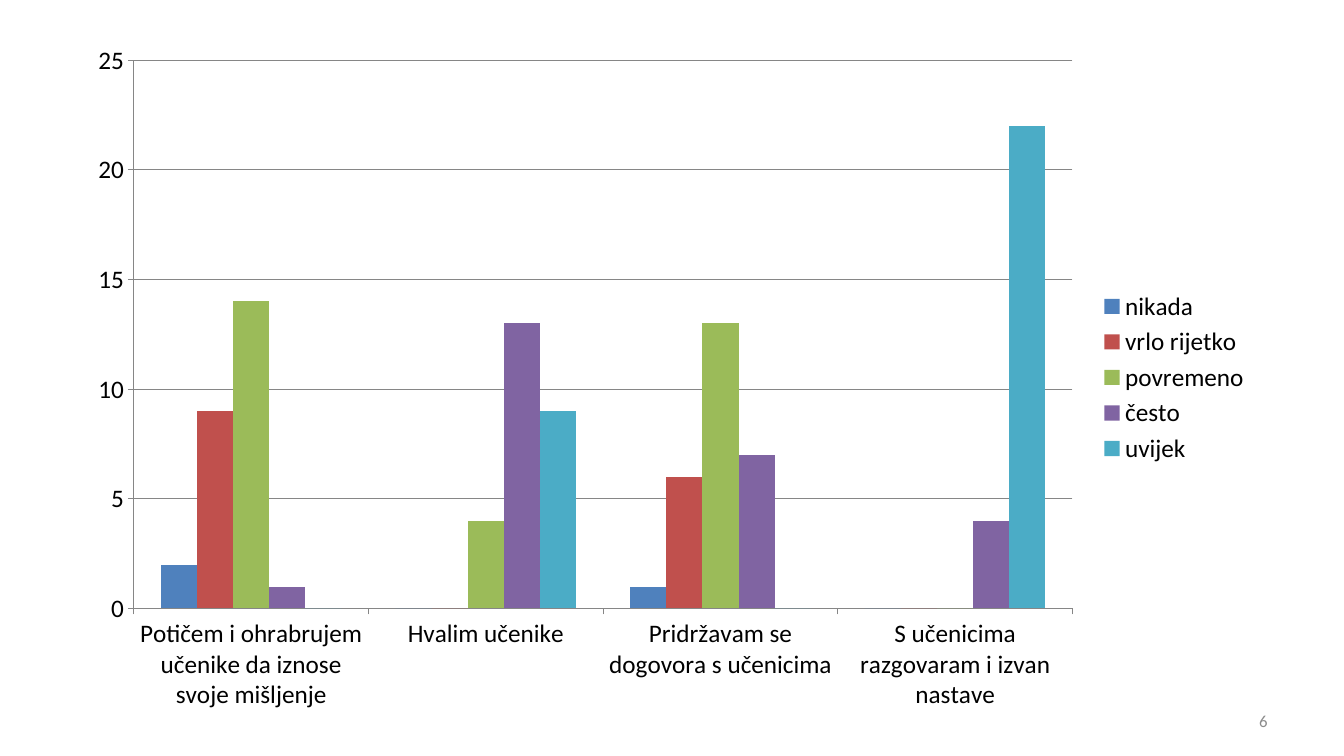
from pptx import Presentation
from pptx import util as u
from pptx.chart.data import CategoryChartData
from pptx.dml.color import RGBColor
from pptx.enum import chart as charts, text

CATEGORIES = [
    "Potičem i ohrabrujem učenike da iznose svoje mišljenje",
    "Hvalim učenike",
    "Pridržavam se dogovora s učenicima",
    "S učenicima razgovaram i izvan nastave",
]
ANSWERS = [
    ("nikada", (2, 0, 1, 0), "4F81BD"),
    ("vrlo rijetko", (9, 0, 6, 0), "C0504D"),
    ("povremeno", (14, 4, 13, 0), "9BBB59"),
    ("često", (1, 13, 7, 4), "8064A2"),
    ("uvijek", (0, 9, 0, 22), "4BACC6"),
]


def color(value):
    return RGBColor.from_string(value)


def write(frame, content, font="Calibri", size=18, fill="000000",
          align=text.PP_ALIGN.LEFT, anchor=text.MSO_ANCHOR.TOP):
    frame.word_wrap = True
    frame.vertical_anchor = anchor
    paragraph = frame.paragraphs[0]
    paragraph.alignment = align
    run = paragraph.add_run()
    run.text = content
    run.font.name = font
    run.font.size = u.Pt(size)
    run.font.color.rgb = color(fill)


class SlideBuilder:
    font = "Calibri"
    ink = "000000"
    muted = "8C8C8C"
    rule = "868686"

    def __init__(self, slide):
        self.slide = slide

    def text_box(self, box, content, **style):
        shape = self.slide.shapes.add_textbox(*map(u.Inches, box))
        write(shape.text_frame, content, font=self.font, **style)

    def style_line(self, line):
        line.color.rgb = color(self.rule)
        line.width = u.Pt(0.75)

    def column_chart(self, box, categories, answers, size):
        data = CategoryChartData()
        data.categories = categories
        for name, values, _ in answers:
            data.add_series(name, values)
        chart = self.slide.shapes.add_chart(
            charts.XL_CHART_TYPE.COLUMN_CLUSTERED, *map(u.Inches, box), data).chart
        chart.has_title = False
        chart.font.name = self.font
        chart.font.size = u.Pt(size)
        chart.font.color.rgb = color(self.ink)

        plot = chart.plots[0]
        plot.gap_width = 150
        plot.overlap = 0
        plot.vary_by_categories = False
        for series, (_, _, fill) in zip(plot.series, answers):
            series.format.fill.solid()
            series.format.fill.fore_color.rgb = color(fill)

        for axis in (chart.category_axis, chart.value_axis):
            axis.major_tick_mark = charts.XL_TICK_MARK.OUTSIDE
            axis.minor_tick_mark = charts.XL_TICK_MARK.NONE
            self.style_line(axis.format.line)
        chart.value_axis.minimum_scale = 0
        chart.value_axis.maximum_scale = 25
        chart.value_axis.major_unit = 5
        self.style_line(chart.value_axis.major_gridlines.format.line)

        chart.has_legend = True
        chart.legend.position = charts.XL_LEGEND_POSITION.RIGHT
        chart.legend.include_in_layout = False


def main():
    presentation = Presentation()
    presentation.slide_width = u.Inches(13.33)
    presentation.slide_height = u.Inches(7.5)
    slide = presentation.slides.add_slide(presentation.slide_layouts[6])
    builder = SlideBuilder(slide)
    builder.column_chart((0.74, 0.31, 11.76, 6.87), CATEGORIES, ANSWERS, size=18)
    builder.text_box((9.56, 6.95, 3.11, 0.4), "6", size=12, fill=builder.muted,
                     align=text.PP_ALIGN.RIGHT, anchor=text.MSO_ANCHOR.MIDDLE)
    presentation.save("out.pptx")


if __name__ == "__main__":
    main()
